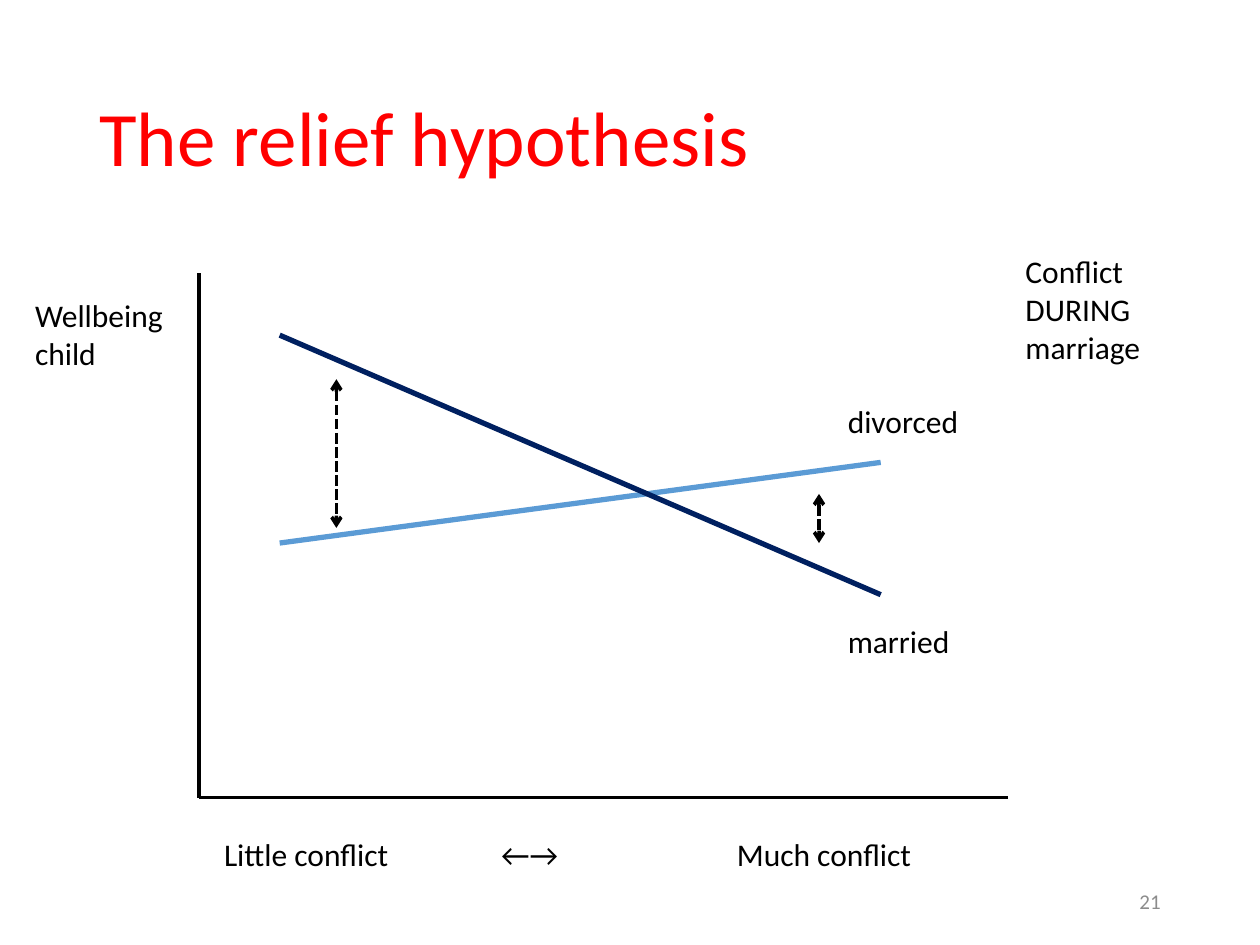
from lxml import etree
from pptx import Presentation
from pptx import util as u
from pptx.dml.color import RGBColor
from pptx.enum import dml, shapes, text
from pptx.oxml.ns import qn

COLORS = {
    "title": "FF0000",
    "ink": "000000",
    "divorced": "5B9BD5",
    "married": "002060",
    "number": "8C8C8C",
}


class SlideBuilder:
    def __init__(self, page, font="Calibri"):
        self.page = page
        self.font = font

    def label(self, words, left, top, width, height, size=18, color="ink",
              anchor=text.MSO_ANCHOR.TOP, align=text.PP_ALIGN.LEFT,
              spacing=1.0, tabs=()):
        """Add a text box; tabs are stops in inches from the text's left edge."""
        box = self.page.shapes.add_textbox(*map(u.Inches, (left, top, width, height)))
        frame = box.text_frame
        frame.word_wrap = True
        frame.vertical_anchor = anchor
        paragraph = frame.paragraphs[0]
        paragraph.text = words
        if tabs:
            stops = etree.SubElement(paragraph._p.get_or_add_pPr(), qn("a:tabLst"))
            for stop in tabs:
                etree.SubElement(stops, qn("a:tab"), pos=str(u.Inches(stop)), algn="l")
        paragraph.alignment = align
        paragraph.line_spacing = spacing
        paragraph.font.name = self.font
        paragraph.font.size = u.Pt(size)
        paragraph.font.color.rgb = RGBColor.from_string(COLORS[color])

    def line(self, start, end, color="ink", width=2):
        connector = self.page.shapes.add_connector(
            shapes.MSO_CONNECTOR.STRAIGHT, *map(u.Inches, (*start, *end)))
        connector.line.width = u.Pt(width)
        connector.line.color.rgb = RGBColor.from_string(COLORS[color])
        etree.SubElement(connector._element.spPr, qn("a:effectLst"))
        return connector

    def gap_arrow(self, x, top, bottom):
        """Add a dashed vertical line with an arrowhead at both ends."""
        line = self.line((x, top), (x, bottom)).line
        line.dash_style = dml.MSO_LINE.SQUARE_DOT
        for end in ("a:headEnd", "a:tailEnd"):
            etree.SubElement(line._get_or_add_ln(), qn(end), type="arrow")


def main():
    deck = Presentation()
    deck.slide_width, deck.slide_height = u.Inches(10), u.Inches(7.5)
    slide = SlideBuilder(deck.slides.add_slide(deck.slide_layouts[6]))

    slide.label("The relief hypothesis", 0.69, 0.4, 8.62, 1.45, size=44,
                color="title", anchor=text.MSO_ANCHOR.MIDDLE, spacing=0.9)

    origin = (1.58, 6.33)
    slide.line((1.58, 2.17), origin)
    slide.line((8, 6.33), origin)
    slide.label("Little conflict\t←→\tMuch conflict", 1.68, 6.58, 6.33, 0.4,
                tabs=(2.2, 4.07))
    slide.label("Wellbeing child", 0.18, 2.3, 1.5, 0.71)

    little, much = 2.22, 6.99
    for group, start, end, label_top in (("divorced", 4.31, 3.67, 3.14),
                                         ("married", 2.66, 4.72, 4.89)):
        slide.line((little, start), (much, end), color=group, width=3)
        slide.label(group, 6.63, label_top, 2.19, 0.4)

    slide.gap_arrow(2.67, 3.01, 4.19)
    slide.gap_arrow(6.5, 3.92, 4.31)

    slide.label("Conflict DURING marriage", 8.04, 1.95, 1.32, 1.01)
    slide.label("21", 7.06, 6.95, 2.25, 0.4, size=12, color="number",
                anchor=text.MSO_ANCHOR.MIDDLE, align=text.PP_ALIGN.RIGHT)

    deck.save("out.pptx")


if __name__ == "__main__":
    main()
